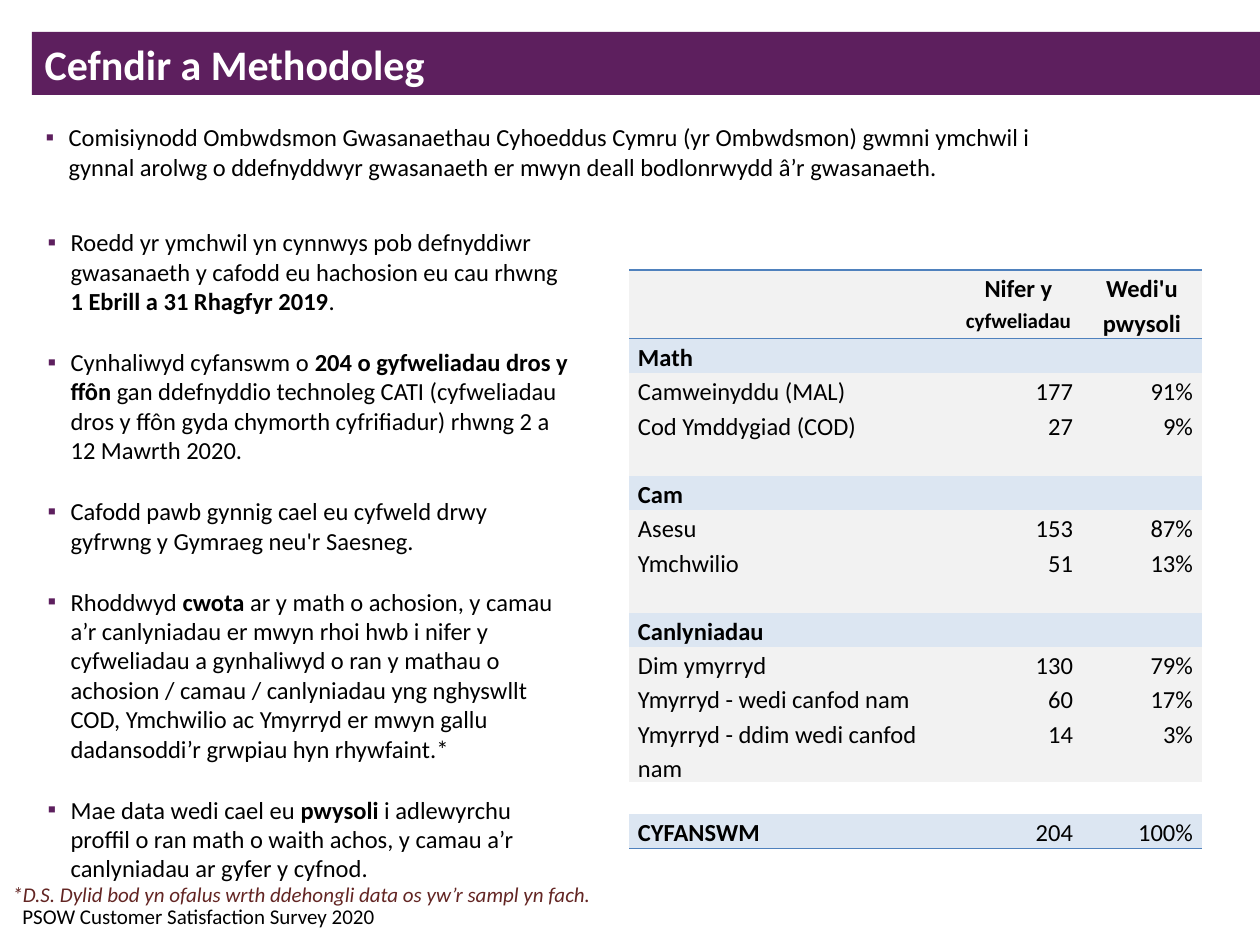
import pptx
import pptx.util
import pptx.dml.color
import pptx.enum.shapes
import pptx.enum.text
import pptx.oxml.ns
from lxml import etree

RGBColor = pptx.dml.color.RGBColor
Pt = pptx.util.Pt
ALIGN = pptx.enum.text.PP_ALIGN
ANCHOR = pptx.enum.text.MSO_ANCHOR
qn = pptx.oxml.ns.qn

PURPLE = RGBColor(0x5D, 0x1F, 0x5E)
WHITE = RGBColor(0xFF, 0xFF, 0xFF)
BLACK = RGBColor(0, 0, 0)
GREY = RGBColor(0xF2, 0xF2, 0xF2)
PALE_BLUE = RGBColor(0xDC, 0xE6, 0xF2)
BLUE = RGBColor(0x4F, 0x81, 0xBD)
MAROON = RGBColor(0x63, 0x25, 0x23)
NO_STYLE = "{2D5ABB26-0587-4C30-8999-92F81FD0307C}"

INTRO = [
    [("Comisiynodd Ombwdsmon Gwasanaethau Cyhoeddus Cymru (yr Ombwdsmon) gwmni ymchwil "
      "i gynnal arolwg o ddefnyddwyr gwasanaeth er mwyn deall bodlonrwydd â’r gwasanaeth.", False)],
]
METHOD = [
    [("Roedd yr ymchwil yn cynnwys pob defnyddiwr gwasanaeth y cafodd eu hachosion eu cau rhwng ", False),
     ("1 Ebrill a 31 Rhagfyr 2019", True), (".", False)],
    [("Cynhaliwyd cyfanswm o ", False), ("204 o gyfweliadau dros y ffôn ", True),
     ("gan ddefnyddio technoleg CATI (cyfweliadau dros y ffôn gyda chymorth cyfrifiadur) "
      "rhwng 2 a 12 Mawrth 2020.", False)],
    [("Cafodd pawb gynnig cael eu cyfweld drwy gyfrwng y Gymraeg neu'r Saesneg.", False)],
    [("Rhoddwyd ", False), ("cwota", True),
     (" ar y math o achosion, y camau a’r canlyniadau er mwyn rhoi hwb i nifer y cyfweliadau "
      "a gynhaliwyd o ran y mathau o achosion / camau / canlyniadau yng nghyswllt COD, Ymchwilio "
      "ac Ymyrryd er mwyn gallu dadansoddi’r grwpiau hyn rhywfaint.*", False)],
    [("Mae data wedi cael eu ", False), ("pwysoli", True),
     (" i adlewyrchu proffil o ran math o waith achos, y camau a’r canlyniadau ar gyfer y cyfnod.", False)],
]
HEADER = ["", [("Nifer y ", 14), ("cyfweliadau", 12)], [("Wedi'u pwysoli", 14)]]
ROWS = [
    ("Math", "", ""),
    ("Camweinyddu (MAL)", "177", "91%"),
    ("Cod Ymddygiad (COD)", "27", "9%"),
    ("", "", ""),
    ("Cam", "", ""),
    ("Asesu", "153", "87%"),
    ("Ymchwilio", "51", "13%"),
    ("", "", ""),
    ("Canlyniadau", "", ""),
    ("Dim ymyrryd", "130", "79%"),
    ("Ymyrryd - wedi canfod nam", "60", "17%"),
    ("Ymyrryd - ddim wedi canfod nam", "14", "3%"),
    ("", "", ""),
    ("CYFANSWM", "204", "100%"),
]


def px(n):
    return pptx.util.Emu(round(n * 914400 / 126))


def place(sp, box):
    sp.left, sp.top, sp.width, sp.height = map(px, box)


def add_run(p, text, size, color=BLACK, bold=False, italic=False):
    r = p.add_run()
    r.text = text
    f = r.font
    f.name, f.size, f.bold, f.italic = "Calibri", Pt(size), bold, italic
    f.color.rgb = color


def add_title(s, box):
    sp = s.shapes.title
    place(sp, box)
    sp.fill.solid()
    sp.fill.fore_color.rgb = PURPLE
    tf = sp.text_frame
    tf.auto_size = pptx.enum.text.MSO_AUTO_SIZE.NONE
    tf.vertical_anchor = ANCHOR.MIDDLE
    p = tf.paragraphs[0]
    p.alignment = ALIGN.LEFT
    add_run(p, "Cefndir a Methodoleg", 24, WHITE, True)


def add_bullets(sp, box, items):
    place(sp, box)
    tf = sp.text_frame
    tf.word_wrap = True
    tf.auto_size = pptx.enum.text.MSO_AUTO_SIZE.NONE
    tf.vertical_anchor = ANCHOR.TOP
    for i, runs in enumerate(items):
        p = tf.add_paragraph() if i else tf.paragraphs[0]
        pPr = p._p.get_or_add_pPr()
        pPr.set("marL", str(px(24)))
        pPr.set("indent", str(px(-23)))
        clr = etree.SubElement(pPr, qn("a:buClr"))
        etree.SubElement(clr, qn("a:srgbClr"), val=str(PURPLE))
        etree.SubElement(pPr, qn("a:buChar"), char="▪")
        p.space_before = Pt(12 if i else 0)
        p.space_after = Pt(6)
        for text, bold in runs:
            add_run(p, text, 14, bold=bold)


def add_note(s, box, text, color, italic=False):
    sp = s.shapes.add_textbox(*map(px, box))
    sp.text_frame.word_wrap = True
    add_run(sp.text_frame.paragraphs[0], text, 12, color, italic=italic)


def add_border(cell, side):
    ln = etree.SubElement(cell._tc.get_or_add_tcPr(), qn("a:" + side), w=str(Pt(1)))
    fill = etree.SubElement(ln, qn("a:solidFill"))
    etree.SubElement(fill, qn("a:srgbClr"), val=str(BLUE))


def fill_cell(cell, runs, align, bold, sides, color):
    cell.margin_left = cell.margin_right = px(9)
    cell.margin_top = cell.margin_bottom = 0
    for side in sides:
        add_border(cell, side)
    if color is None:
        cell.fill.background()
    else:
        cell.fill.solid()
        cell.fill.fore_color.rgb = color
    p = cell.text_frame.paragraphs[0]
    p.alignment = align
    if runs:
        p.line_spacing = 1.15
    else:
        etree.SubElement(p._p, qn("a:endParaRPr"), sz="1200")
    for text, size in runs:
        add_run(p, text, size, bold=bold)


def add_results(s, box):
    x, y, w, h = box
    panel = s.shapes.add_shape(pptx.enum.shapes.MSO_SHAPE.RECTANGLE, px(x), px(y), px(w), px(512))
    panel.shadow.inherit = False
    panel.fill.solid()
    panel.fill.fore_color.rgb = GREY
    panel.line.fill.background()

    table = s.shapes.add_table(len(ROWS) + 1, 3, *map(px, box)).table
    table.first_row = table.horz_banding = False
    table._tbl.tblPr.find(qn("a:tableStyleId")).text = NO_STYLE
    for col, width in zip(table.columns, (326, 127, w - 326 - 127)):
        col.width = px(width)
    table.rows[0].height = px(68)
    for c, runs in enumerate(HEADER):
        fill_cell(table.cell(0, c), runs, ALIGN.CENTER, True, ("lnT", "lnB"), None)

    last = len(ROWS)
    for n, row in enumerate(ROWS, 1):
        total = n == last
        band = total or (row[0] and not row[1])
        table.rows[n].height = px(30 if n == last - 1 else 34 if not row[0] else 33)
        for c, text in enumerate(row):
            fill_cell(table.cell(n, c), [(text, 14)] if text else [],
                      ALIGN.RIGHT if c else ALIGN.LEFT, bool(band and not c),
                      ("lnB",) if total else (), PALE_BLUE if band else None)


def main():
    prs = pptx.Presentation()
    prs.slide_width, prs.slide_height = px(1260), px(945)
    s = prs.slides.add_slide(prs.slide_layouts[3])
    add_title(s, (32, 32, 1228, 63))
    add_bullets(s.placeholders[1], (32, 116, 1029, 72), INTRO)
    add_bullets(s.placeholders[2], (34, 221, 553, 674), METHOD)
    add_results(s, (629, 270, 573, 546))
    add_note(s, (0, 875, 726, 38),
             "*D.S. Dylid bod yn ofalus wrth ddehongli data os yw’r sampl yn fach.", MAROON, True)
    add_note(s, (10, 897, 662, 38), "PSOW Customer Satisfaction Survey 2020", BLACK)
    prs.save("out.pptx")


if __name__ == "__main__":
    main()
